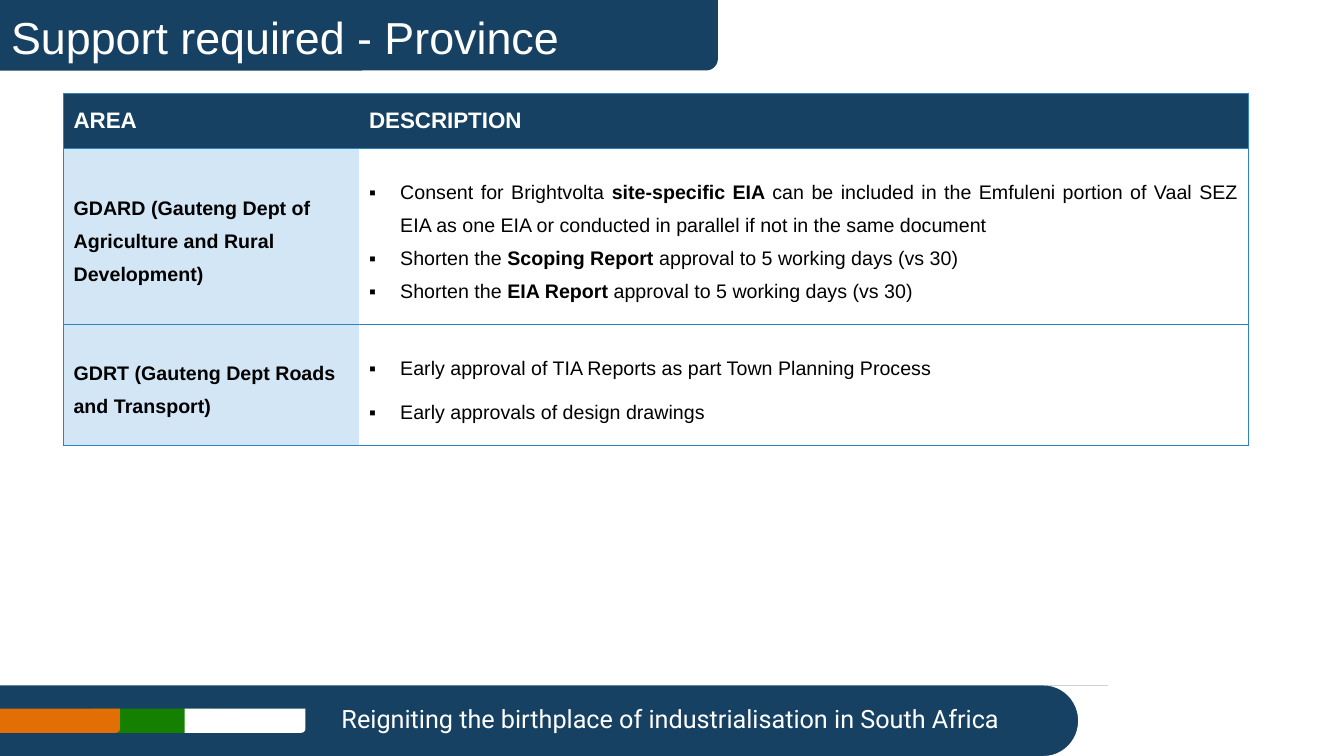
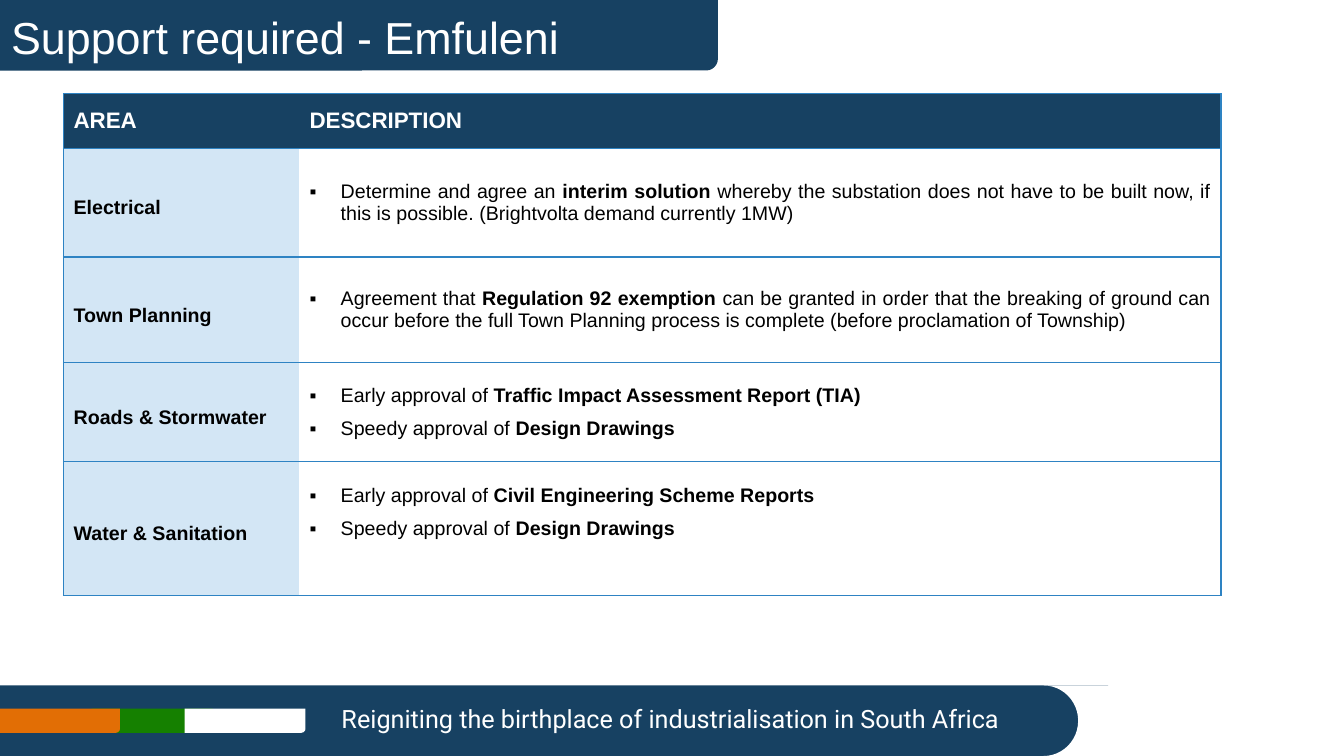
from lxml import etree
from pptx import Presentation
from pptx.dml.color import RGBColor
from pptx.enum.shapes import MSO_SHAPE
from pptx.enum.text import MSO_ANCHOR, MSO_AUTO_SIZE, PP_ALIGN
from pptx.oxml.ns import qn
from pptx.util import Inches, Pt

RECT = MSO_SHAPE.RECTANGLE
ROUND_ONE = MSO_SHAPE.ROUND_1_RECTANGLE
STORAGE = MSO_SHAPE.FLOWCHART_STORED_DATA
MIDDLE = MSO_ANCHOR.MIDDLE
LEFT, RIGHT, JUSTIFY = PP_ALIGN.LEFT, PP_ALIGN.RIGHT, PP_ALIGN.JUSTIFY

W, H = 13.33, 7.5
BAND = 0.7
NAVY, PALE, RULE = "174162", "D3E6F5", "2E83C3"
GREEN, ORANGE, WHITE, BLACK = "158000", "E26E05", "FFFFFF", "000000"
FONT, FOOTER_FONT = "Arial", "Roboto"
SLOGAN = "Reigniting the birthplace of industrialisation in South Africa"
TABLE_LEFT, TABLE_TOP = 0.63, 0.93
HEADER_HEIGHT = 0.54
INDENT = 0.31


def rgb(code):
    return RGBColor.from_string(code)


def inches(*values):
    return [Inches(v) for v in values]


def add_run(p, text, size, color, bold=False, font=FONT):
    r = p.add_run()
    r.text = text
    r.font.size = Pt(size)
    r.font.name = font
    r.font.bold = bold
    r.font.color.rgb = rgb(color)


def add_block(s, kind, box, color, rotation=0):
    sp = s.shapes.add_shape(kind, *inches(*box))
    sp.shadow.inherit = False
    sp.fill.solid()
    sp.fill.fore_color.rgb = rgb(color)
    sp.line.fill.background()
    sp.rotation = rotation


def add_tab(s, box, color):
    """Block with only its bottom right corner rounded: a quarter-turned shape."""
    x, y, w, h = box
    turned = (x + (w - h) / 2, y + (h - w) / 2, h, w)
    add_block(s, ROUND_ONE, turned, color, 90)


def add_title(s, box, text):
    x, y, w, h = box
    add_tab(s, box, NAVY)
    title = s.shapes.title
    title.left, title.top, title.width, title.height = inches(
        x + 0.01, y + 0.06, w - 0.04, h - 0.09)
    tf = title.text_frame
    tf.auto_size = MSO_AUTO_SIZE.NONE
    tf.vertical_anchor = MIDDLE
    p = tf.paragraphs[0]
    p.alignment = LEFT
    add_run(p, text, 32, WHITE)
    s.shapes.element.append(title.element)  # bring the title in front of its band


def add_footer(s, box):
    x, y, w, h = box
    add_block(s, RECT, box, NAVY)
    chip_w, chip_h, step = 1.2, 0.24, 0.92
    for slot, color in ((1, GREEN), (0, ORANGE), (2, WHITE)):
        add_tab(s, (x + slot * step, y + (h - chip_h) / 2, chip_w, chip_h), color)
    add_block(s, STORAGE, (x + w - 0.64, y, 2.06, h), WHITE, 180)

    sp = s.shapes.add_textbox(*inches(x + 2.84, y + 0.13, 7.18, 0.4))
    tf = sp.text_frame
    tf.word_wrap = True
    tf.vertical_anchor = MIDDLE
    p = tf.paragraphs[0]
    p.alignment = RIGHT
    add_run(p, SLOGAN, 18, WHITE, font=FOOTER_FONT)


def set_borders(cell, sides):
    """Rule the listed sides (out of L, R, T, B) and clear the others."""
    tcPr = cell._tc.get_or_add_tcPr()
    for i, side in enumerate("LRTB"):
        ln = etree.Element(qn("a:ln" + side), w=str(Pt(1)))
        if side in sides:
            fill = etree.SubElement(ln, qn("a:solidFill"))
            etree.SubElement(fill, qn("a:srgbClr"), val=RULE)
        else:
            etree.SubElement(ln, qn("a:noFill"))
        tcPr.insert(i, ln)


def style_cell(cell, fill, sides):
    cell.fill.solid()
    cell.fill.fore_color.rgb = rgb(fill)
    cell.vertical_anchor = MIDDLE
    set_borders(cell, sides)


def add_bullet(p):
    pPr = p._p.get_or_add_pPr()
    pPr.set("marL", str(Inches(INDENT)))
    pPr.set("indent", str(-Inches(INDENT)))
    etree.SubElement(pPr, qn("a:buFont"), typeface=FONT)
    etree.SubElement(pPr, qn("a:buChar"), char="▪")


def fill_description(cell, items, spacing, gap):
    """Write bullets; text between ** marks is bold."""
    tf = cell.text_frame
    for i, item in enumerate(items):
        p = tf.paragraphs[0] if i == 0 else tf.add_paragraph()
        p.alignment = JUSTIFY
        p.line_spacing = spacing
        p.space_after = Pt(gap)
        add_bullet(p)
        for n, part in enumerate(item.split("**")):
            if part:
                add_run(p, part, 14, BLACK, bold=n % 2 == 1)


def add_support_table(s, left, top, widths, rows):
    heights = [HEADER_HEIGHT] + [row["height"] for row in rows]
    frame = s.shapes.add_table(len(heights), 2, *inches(
        left, top, sum(widths), sum(heights)))
    table = frame.table
    table.horz_banding = False
    for column, width in zip(table.columns, widths):
        column.width = Inches(width)
    for line, height in zip(table.rows, heights):
        line.height = Inches(height)

    for c, (heading, side) in enumerate((("AREA", "L"), ("DESCRIPTION", "R"))):
        cell = table.cell(0, c)
        style_cell(cell, NAVY, side + "TB")
        add_run(cell.text_frame.paragraphs[0], heading, 16, WHITE, True)

    for i, row in enumerate(rows, 1):
        area, description = table.cell(i, 0), table.cell(i, 1)
        style_cell(area, PALE, "LTB")
        p = area.text_frame.paragraphs[0]
        p.line_spacing = 1.5
        add_run(p, row["area"], 14, BLACK, True)
        style_cell(description, WHITE, "RTB")
        description.margin_bottom = Inches(row.get("foot", 0.05))
        fill_description(description, row["items"],
                         row.get("spacing", 1.0), row.get("gap", 0))


def add_support_slide(prs, place, widths, rows):
    s = prs.slides.add_slide(prs.slide_layouts[5])
    add_footer(s, (-0.01, H - BAND, 11, BAND))
    add_title(s, (0, 0, 7.12, BAND), "Support required - " + place)
    add_support_table(s, TABLE_LEFT, TABLE_TOP, widths, rows)


PROVINCE = [
    {"area": "GDARD (Gauteng Dept of Agriculture and Rural Development)",
     "height": 1.75, "spacing": 1.5, "items": [
         "Consent for Brightvolta **site-specific EIA **can be included in the "
         "Emfuleni portion of Vaal SEZ EIA as one EIA or conducted in parallel "
         "if not in the same document",
         "Shorten the **Scoping Report **approval to 5 working days (vs 30)",
         "Shorten the **EIA Report **approval to 5 working days (vs 30)"]},
    {"area": "GDRT (Gauteng Dept Roads and Transport)",
     "height": 1.2, "spacing": 1.5, "gap": 8, "items": [
         "Early approval of TIA Reports as part Town Planning Process",
         "Early approvals of design drawings"]},
]

EMFULENI = [
    {"area": "Electrical", "height": 1.08, "items": [
        "Determine and agree an **interim solution** whereby the substation does "
        "not have to be built now, if this is possible. (Brightvolta demand "
        "currently 1MW)"]},
    {"area": "Town Planning", "height": 1.05, "items": [
        "Agreement that **Regulation 92 exemption **can be granted in order that "
        "the breaking of ground can occur before the full Town Planning process "
        "is complete (before proclamation of Township)"]},
    {"area": "Roads & Stormwater", "height": 0.98, "gap": 8, "items": [
        "Early approval of **Traffic Impact Assessment Report (TIA)**",
        "Speedy approval of **Design Drawings**"]},
    {"area": "Water & Sanitation", "height": 1.33, "gap": 8, "foot": 0.38, "items": [
        "Early approval of **Civil Engineering Scheme Reports**",
        "Speedy approval of **Design Drawings**"]},
]


def main():
    prs = Presentation()
    prs.slide_width, prs.slide_height = inches(W, H)
    add_support_slide(prs, "Province", (2.93, 8.82), PROVINCE)
    add_support_slide(prs, "Emfuleni", (2.34, 9.14), EMFULENI)
    prs.save("out.pptx")


if __name__ == "__main__":
    main()
